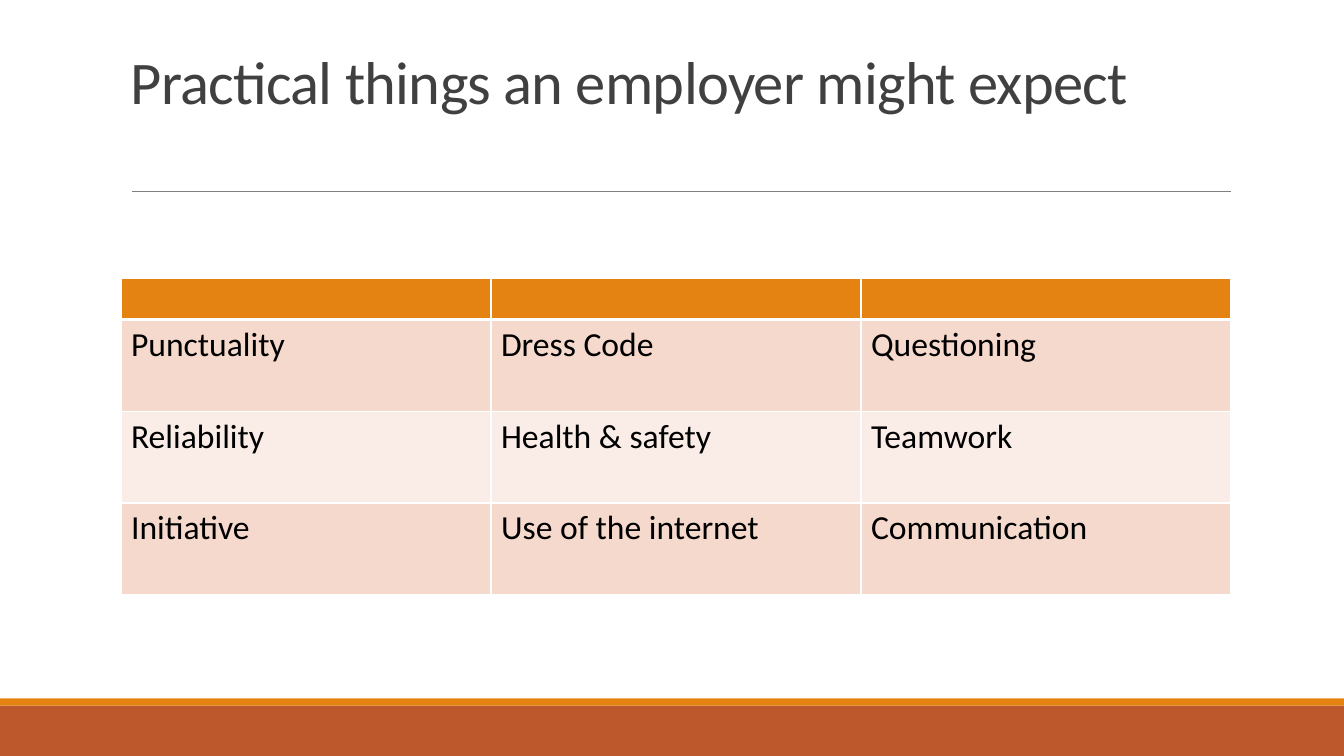
from dataclasses import dataclass

from lxml.etree import SubElement
from pptx import Presentation
from pptx.dml.color import RGBColor
from pptx.enum.shapes import MSO_CONNECTOR as Connector, MSO_SHAPE as Shape
from pptx.enum.text import MSO_ANCHOR as Anchor
from pptx.oxml.ns import qn
from pptx.util import Emu, Pt

EMU_PER_PX = 9144
SLIDE_W, SLIDE_H = 1333, 750


@dataclass(frozen=True)
class Theme:
    font: str = "Calibri"
    title_size: float = 43.2
    cell_size: float = 24
    title: str = "404040"
    text: str = "000000"
    rule: str = "808080"
    accent: str = "E48312"
    footer: str = "BD582C"
    bands: tuple = ("F5D9CC", "FAEDE7")
    border: str = "FFFFFF"


def px(length):
    return Emu(length * EMU_PER_PX)


def rgb(color):
    return RGBColor.from_string(color)


def write(frame, text, *, font, size, color, line_spacing=None, tracking=None):
    paragraph = frame.paragraphs[0]
    paragraph.line_spacing = line_spacing
    run = paragraph.add_run()
    run.text = text
    run.font.name = font
    run.font.size = Pt(size)
    run.font.color.rgb = rgb(color)
    if tracking is not None:
        run.font._element.set("spc", str(int(tracking * 100)))


def set_borders(cell, color, **widths):
    """Draw cell borders, given as L, R, T, B widths in points, before any fill."""
    properties = cell._tc.get_or_add_tcPr()
    for side in "LRTB":
        line = SubElement(properties, qn(f"a:ln{side}"), w=str(Pt(widths[side])))
        fill = SubElement(line, qn("a:solidFill"))
        SubElement(fill, qn("a:srgbClr"), val=color)


class SlideBuilder:
    def __init__(self, slide, theme):
        self.shapes = slide.shapes
        self.theme = theme

    def bar(self, top, height, color):
        bar = self.shapes.add_shape(Shape.RECTANGLE, 0, px(top), px(SLIDE_W), px(height))
        bar.shadow.inherit = False
        bar.fill.solid()
        bar.fill.fore_color.rgb = rgb(color)
        bar.line.fill.background()

    def rule(self, left, right, y):
        rule = self.shapes.add_connector(Connector.STRAIGHT, px(left), px(y), px(right), px(y))
        rule.line.color.rgb = rgb(self.theme.rule)
        rule.line.width = Pt(0.5)
        SubElement(rule._element.spPr, qn("a:effectLst"))

    def title(self, text, left, top, width, height, bottom_inset):
        frame = self.shapes.add_textbox(px(left), px(top), px(width), px(height)).text_frame
        frame.word_wrap = True
        frame.vertical_anchor = Anchor.BOTTOM
        frame.margin_bottom = px(bottom_inset)
        write(frame, text, font=self.theme.font, size=self.theme.title_size,
              color=self.theme.title, line_spacing=0.85, tracking=-0.5)

    def table(self, rows, left, top, column_width, header_height, row_height):
        """Add a table with an empty header band above the given rows."""
        theme = self.theme
        columns = len(rows[0])
        height = header_height + row_height * len(rows)
        table = self.shapes.add_table(len(rows) + 1, columns, px(left), px(top),
                                      px(column_width * columns), px(height)).table
        table.first_row = table.horz_banding = False
        for column in table.columns:
            column.width = px(column_width)
        for r, labels in enumerate([[""] * columns, *rows]):
            table.rows[r].height = px(row_height if r else header_height)
            for c, label in enumerate(labels):
                cell = table.cell(r, c)
                set_borders(cell, theme.border, L=1, R=1,
                            T=3 if r == 1 else 1, B=3 if r == 0 else 1)
                cell.fill.solid()
                cell.fill.fore_color.rgb = rgb(theme.bands[(r - 1) % 2] if r else theme.accent)
                if label:
                    write(cell.text_frame, label, font=theme.font,
                          size=theme.cell_size, color=theme.text)


def main():
    presentation = Presentation()
    presentation.slide_width, presentation.slide_height = px(SLIDE_W), px(SLIDE_H)
    theme = Theme()
    page = SlideBuilder(presentation.slides.add_slide(presentation.slide_layouts[6]), theme)

    page.bar(700, 50, theme.footer)
    page.bar(693, 7, theme.accent)
    page.rule(131, 1221, 190)
    page.title("Practical things an employer might expect", 120, 31, 1100, 159, bottom_inset=74)
    expectations = [
        ("Punctuality", "Dress Code", "Questioning"),
        ("Reliability", "Health & safety", "Teamwork"),
        ("Initiative", "Use of the internet", "Communication"),
    ]
    page.table(expectations, 120, 276, column_width=367, header_height=41, row_height=91)
    presentation.save("out.pptx")


if __name__ == "__main__":
    main()
